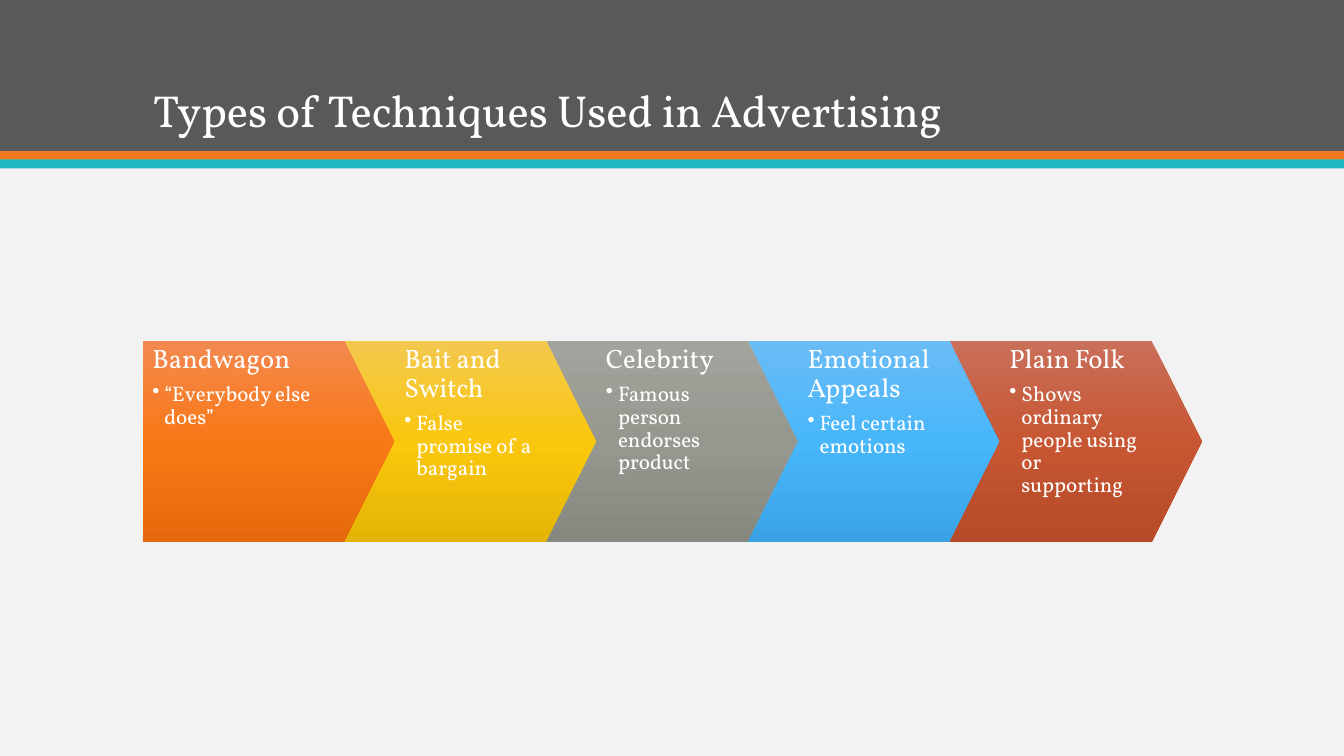
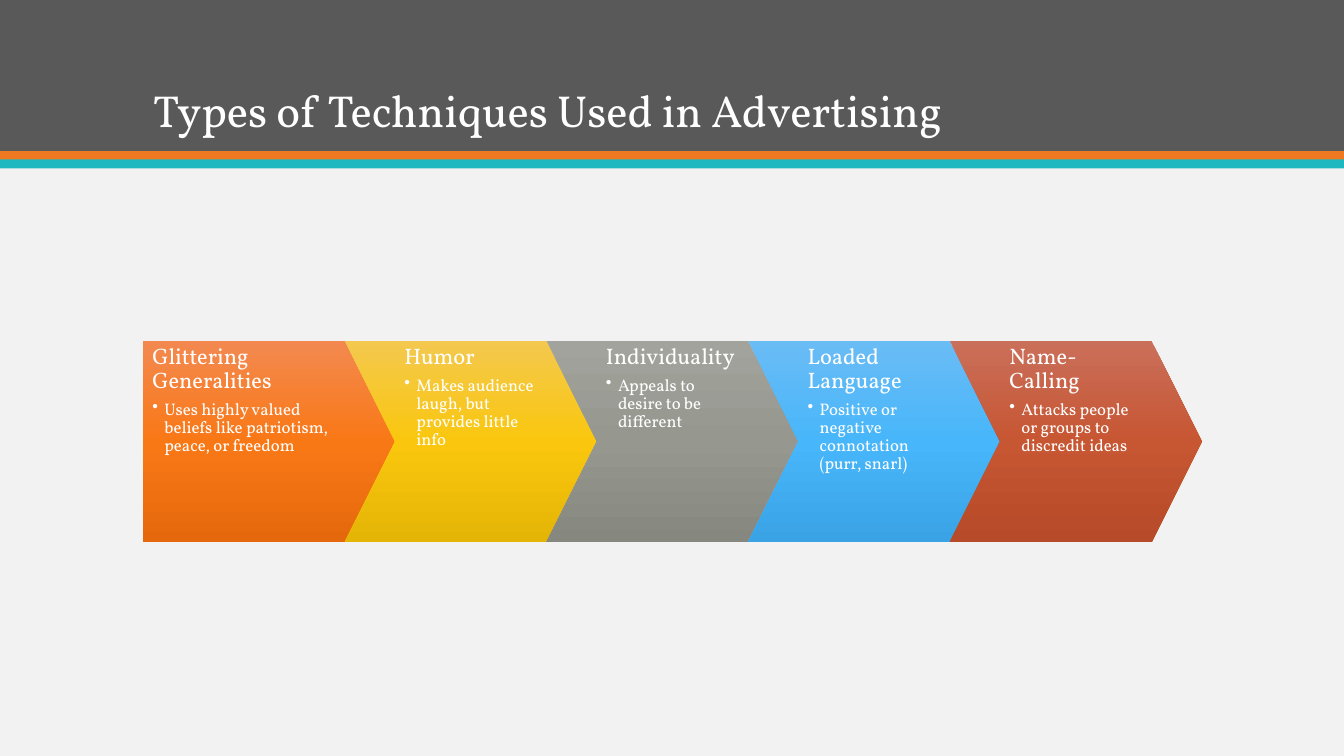
import copy

import pptx
import pptx.dml.color
import pptx.enum.shapes
import pptx.enum.text
import pptx.oxml
import pptx.oxml.ns
import pptx.util

Inches = pptx.util.Inches
Pt = pptx.util.Pt
RGBColor = pptx.dml.color.RGBColor
Shape = pptx.enum.shapes.MSO_SHAPE
Anchor = pptx.enum.text.MSO_ANCHOR
qn = pptx.oxml.ns.qn

# Colours
WHITE = RGBColor(0xFF, 0xFF, 0xFF)
PAPER = RGBColor(0xF2, 0xF2, 0xF2)
CHARCOAL = RGBColor(0x59, 0x59, 0x59)
ORANGE = RGBColor(0xEF, 0x79, 0x20)
TEAL = RGBColor(0x1E, 0xB8, 0xC1)
GRADIENTS = [
    (RGBColor(0xF3, 0x89, 0x50), RGBColor(0xF9, 0x78, 0x16), RGBColor(0xE5, 0x69, 0x0C)),
    (RGBColor(0xF3, 0xC8, 0x4E), RGBColor(0xFA, 0xC7, 0x0E), RGBColor(0xE5, 0xB5, 0x06)),
    (RGBColor(0xA2, 0xA3, 0x9C), RGBColor(0x96, 0x98, 0x90), RGBColor(0x86, 0x88, 0x7F)),
    (RGBColor(0x6A, 0xBC, 0xF5), RGBColor(0x48, 0xB6, 0xFA), RGBColor(0x39, 0xA3, 0xE5)),
    (RGBColor(0xCA, 0x6F, 0x5A), RGBColor(0xC7, 0x56, 0x33), RGBColor(0xB7, 0x4A, 0x28)),
]

# Shared style and layout, in inches
FONT = "Vollkorn"
PAGE_WIDTH, PAGE_HEIGHT = 13.33, 7.5
BANDS = [(0, 1.5, CHARCOAL), (1.5, 0.09, ORANGE), (1.58, 0.09, TEAL)]
LEFT, CONTENT_WIDTH = 1.42, 10.5
ARROW_TOP, ARROW_WIDTH, ARROW_HEIGHT = 3.38, 2.5, 2
ARROW_STEP, ARROW_POINT = 2, 0.5
BULLET_INDENT = 0.12

# Content
TITLE = "Types of Techniques Used in Advertising"
PAGES = [
    {"heading_size": 19, "detail_size": 15, "inset": 0.05, "techniques": [
        ("Bandwagon", "“Everybody else does”"),
        ("Bait and Switch", "False promise of a bargain"),
        ("Celebrity", "Famous person endorses product"),
        ("Emotional Appeals", "Feel certain emotions"),
        ("Plain Folk", "Shows ordinary people using or supporting"),
    ]},
    {"heading_size": 16, "detail_size": 12, "inset": 0.04, "techniques": [
        ("Glittering Generalities",
         "Uses highly valued beliefs like patriotism, peace, or freedom"),
        ("Humor", "Makes audience laugh, but provides little info"),
        ("Individuality", "Appeals to desire to be different"),
        ("Loaded Language", "Positive or negative connotation (purr, snarl)"),
        ("Name-Calling", "Attacks people or groups to discredit ideas"),
    ]},
]


def write(para, text, size, space_after=0, bullet=False):
    """Fill a paragraph; space_after is a share of the text size."""
    para.line_spacing = 0.9
    para.space_after = Pt(round(size * space_after, 2))
    span = para.add_run()
    span.text = text
    span.font.name = FONT
    span.font.size = Pt(size)
    span.font.color.rgb = WHITE
    if bullet:
        properties = para._p.get_or_add_pPr()
        properties.set("marL", str(Inches(BULLET_INDENT)))
        properties.set("indent", str(-Inches(BULLET_INDENT)))
        mark = pptx.oxml.parse_xml(
            '<a:buChar xmlns:a="http://schemas.openxmlformats.org/drawingml/2006/main"'
            ' char="•"/>')
        properties.append(mark)


class Presenter:
    """Holds the deck, its style and the current page."""

    def __init__(self):
        self.deck = pptx.Presentation()
        self.deck.slide_width = Inches(PAGE_WIDTH)
        self.deck.slide_height = Inches(PAGE_HEIGHT)
        self.page = None

    def add_page(self, title):
        self.page = self.deck.slides.add_slide(self.deck.slide_layouts[6])
        background = self.page.background.fill
        background.solid()
        background.fore_color.rgb = PAPER
        for top, height, colour in BANDS:
            band = self.add_shape(Shape.RECTANGLE, 0, top, PAGE_WIDTH, height)
            band.fill.solid()
            band.fill.fore_color.rgb = colour
        frame = self.add_text(LEFT, 0.28, CONTENT_WIDTH, 1.13, anchor=Anchor.BOTTOM)
        write(frame.paragraphs[0], title, 32)

    def add_shape(self, kind, left, top, width, height):
        shape = self.page.shapes.add_shape(
            kind, Inches(left), Inches(top), Inches(width), Inches(height))
        shape.shadow.inherit = False
        shape.line.fill.background()
        return shape

    def add_text(self, left, top, width, height, insets=(0.1, 0.05, 0.1, 0.05),
                 anchor=Anchor.TOP):
        box = self.page.shapes.add_textbox(
            Inches(left), Inches(top), Inches(width), Inches(height))
        frame = box.text_frame
        frame.word_wrap = True
        frame.vertical_anchor = anchor
        (frame.margin_left, frame.margin_top,
         frame.margin_right, frame.margin_bottom) = map(Inches, insets)
        return frame

    def add_arrow(self, kind, left, colours):
        arrow = self.add_shape(kind, left, ARROW_TOP, ARROW_WIDTH, ARROW_HEIGHT)
        arrow.adjustments[0] = ARROW_POINT / ARROW_HEIGHT
        arrow.fill.gradient()
        arrow.fill.gradient_angle = 270
        # The default gradient has two stops; a middle one is added
        stop_list = arrow._element.spPr.find(qn("a:gradFill")).find(qn("a:gsLst"))
        stop_list.insert(1, copy.deepcopy(stop_list[0]))
        for stop, position, colour in zip(arrow.fill.gradient_stops, (0, 0.5, 1), colours):
            stop.position = position
            stop.color.rgb = colour

    def add_techniques(self, techniques, heading_size, detail_size, inset):
        for index, (heading, detail) in enumerate(techniques):
            left = LEFT + index * ARROW_STEP
            first = index == 0
            self.add_arrow(Shape.PENTAGON if first else Shape.CHEVRON, left, GRADIENTS[index])
            # The first arrow has no notch, so its text starts at the edge
            text_left = left if first else left + ARROW_POINT
            text_width = 2.25 if first else 1.5
            right_inset = 0.35 if first else 0.09
            frame = self.add_text(text_left, ARROW_TOP, text_width, ARROW_HEIGHT,
                                  insets=(0.09, inset, right_inset, inset))
            write(frame.paragraphs[0], heading, heading_size, space_after=0.35)
            write(frame.add_paragraph(), detail, detail_size, space_after=0.15, bullet=True)


def main():
    presenter = Presenter()
    for content in PAGES:
        presenter.add_page(TITLE)
        presenter.add_techniques(**content)
    presenter.deck.save("out.pptx")


if __name__ == "__main__":
    main()
